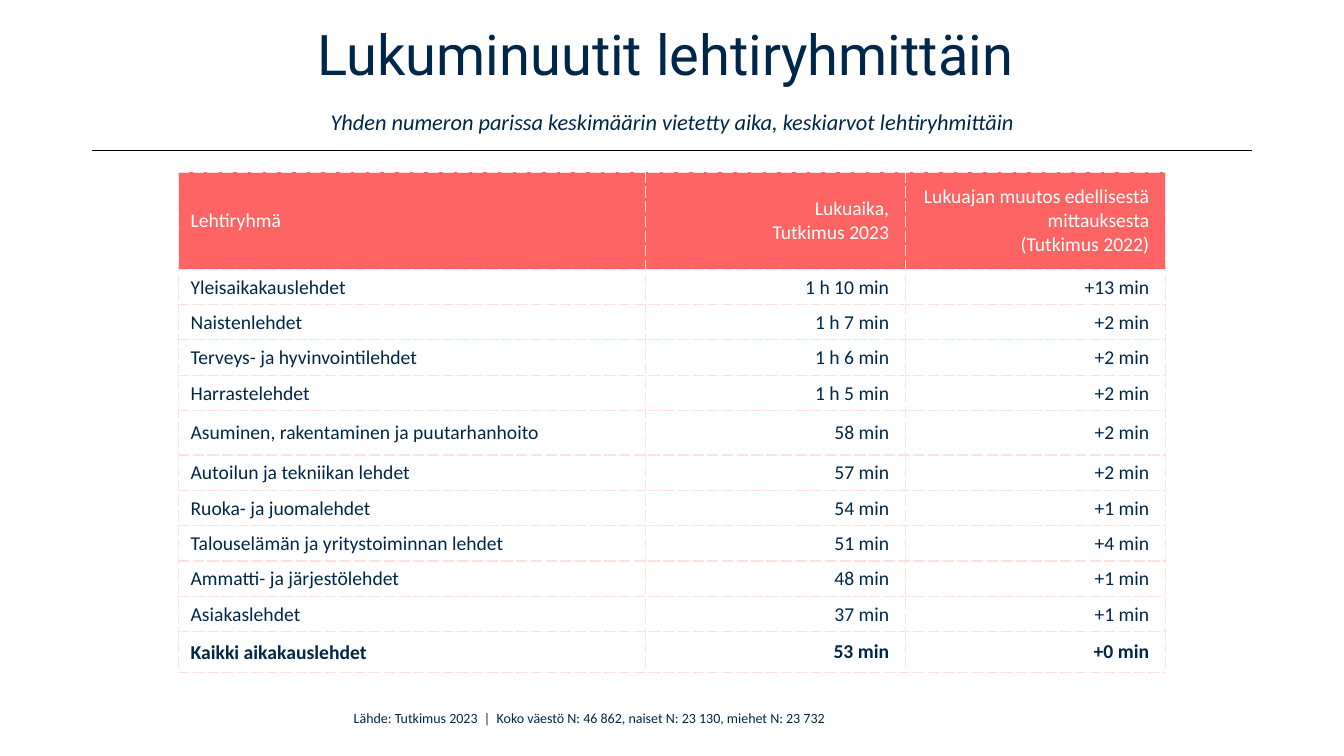
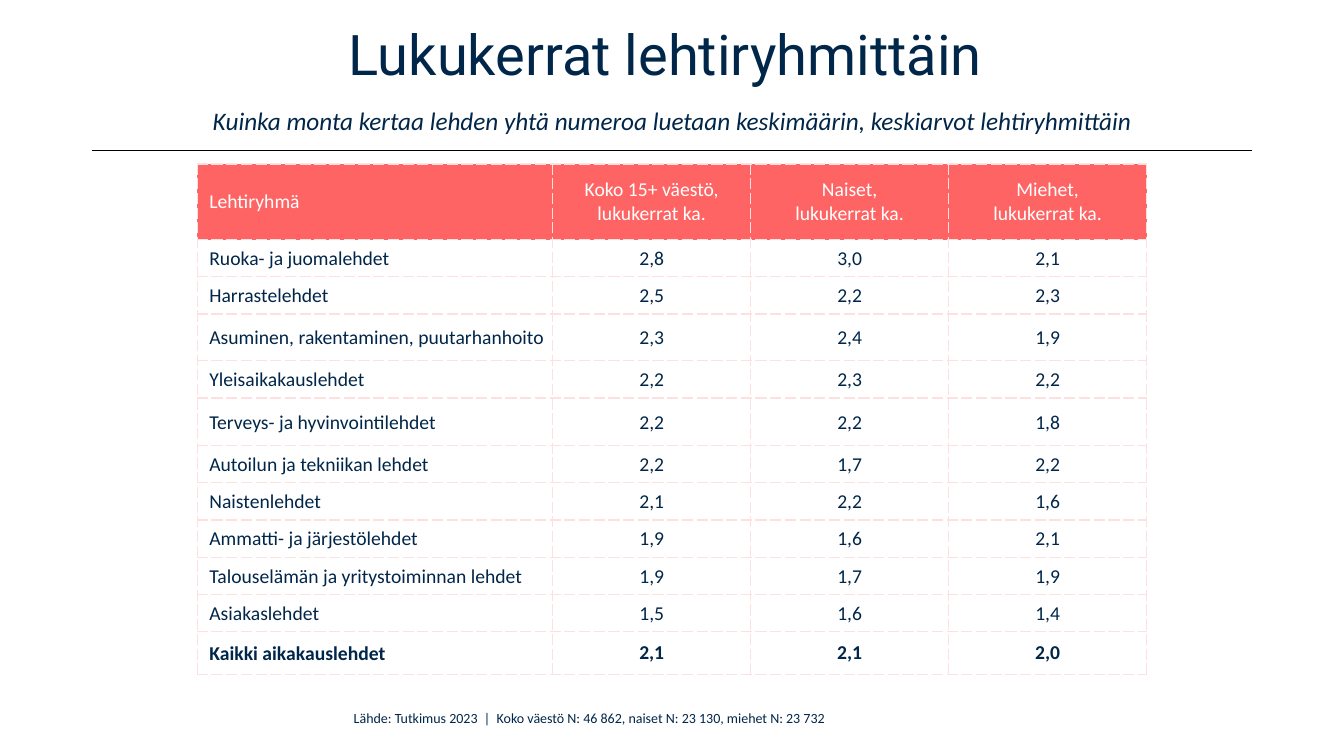
from dataclasses import dataclass

from lxml import etree
from pptx import Presentation
from pptx.dml.color import RGBColor
from pptx.enum.shapes import MSO_CONNECTOR
from pptx.enum.text import MSO_ANCHOR, PP_ALIGN
from pptx.oxml.ns import qn
from pptx.util import Inches, Pt

LEFT, CENTER, RIGHT = PP_ALIGN.LEFT, PP_ALIGN.CENTER, PP_ALIGN.RIGHT
MIDDLE, TOP = MSO_ANCHOR.MIDDLE, MSO_ANCHOR.TOP
STRAIGHT = MSO_CONNECTOR.STRAIGHT


@dataclass(frozen=True)
class Theme:
    navy: str = "002649"
    black: str = "000000"
    white: str = "FFFFFF"
    coral: str = "FF6464"
    blush: str = "FFE0E0"
    title_font: str = "Roboto"
    body_font: str = "Calibri"
    title_size: int = 40
    table_size: int = 14
    footer_size: int = 10
    title_spacing: int = 35
    line_width: int = 1


THEME = Theme()
WIDTH, HEIGHT = Inches(13.33), Inches(7.5)

FOOTER = "Lähde: Tutkimus 2023  |  Koko väestö N: 46 862, naiset N: 23 130, miehet N: 23 732"
TITLE_AREA = (6.9, 4.27, 86.25, 14.27)
FOOTER_AREA = (18.83, 93.2, 50, 3.6)
RULE_ROW = 19.87
RULES = [(9.6, 91.12, THEME.navy), (6.83, 93.17, THEME.black)]

SLIDES = [
    {
        "title": "Lukuminuutit lehtiryhmittäin ",
        "subtitle": "Yhden numeron parissa keskimäärin vietetty aika, keskiarvot lehtiryhmittäin",
        "subtitle_size": 16,
        "top": 22.8,
        "columns": [34.73, 19.35, 19.35],
        "row_height": 4.68,
        "special_rows": {0: 12.8, 5: 5.87, 11: 5.4},
        "value_align": RIGHT,
        "value_inset": 0.16,
        "rows": [
            ("Lehtiryhmä", "Lukuaika,\nTutkimus 2023",
             "Lukuajan muutos edellisestä mittauksesta\n(Tutkimus 2022)"),
            ("Yleisaikakauslehdet", "1 h 10 min", "+13 min"),
            ("Naistenlehdet", "1 h 7 min", "+2 min"),
            ("Terveys- ja hyvinvointilehdet", "1 h 6 min", "+2 min"),
            ("Harrastelehdet", "1 h 5 min", "+2 min"),
            ("Asuminen, rakentaminen ja puutarhanhoito", "58 min", "+2 min"),
            ("Autoilun ja tekniikan lehdet", "57 min", "+2 min"),
            ("Ruoka- ja juomalehdet", "54 min", "+1 min"),
            ("Talouselämän ja yritystoiminnan lehdet", "51 min", "+4 min"),
            ("Ammatti- ja järjestölehdet", "48 min", "+1 min"),
            ("Asiakaslehdet", "37 min", "+1 min"),
            ("Kaikki aikakauslehdet", "53 min", "+0 min"),
        ],
    },
    {
        "title": "Lukukerrat lehtiryhmittäin ",
        "subtitle": "Kuinka monta kertaa lehden yhtä numeroa luetaan keskimäärin, "
                    "keskiarvot lehtiryhmittäin",
        "subtitle_size": 18,
        "top": 21.7,
        "columns": [26.45, 14.73, 14.73, 14.73],
        "row_height": 4.92,
        "special_rows": {0: 10, 3: 6.2, 5: 6.3, 11: 5.7},
        "value_align": CENTER,
        "value_inset": 0.01,
        "rows": [
            ("Lehtiryhmä", "Koko 15+ väestö,\nlukukerrat ka.",
             "Naiset,\nlukukerrat ka.", "Miehet,\nlukukerrat ka."),
            ("Ruoka- ja juomalehdet", "2,8", "3,0", "2,1"),
            ("Harrastelehdet", "2,5", "2,2", "2,3"),
            ("Asuminen, rakentaminen, puutarhanhoito", "2,3", "2,4", "1,9"),
            ("Yleisaikakauslehdet", "2,2", "2,3", "2,2"),
            ("Terveys- ja hyvinvointilehdet", "2,2", "2,2", "1,8"),
            ("Autoilun ja tekniikan lehdet", "2,2", "1,7", "2,2"),
            ("Naistenlehdet", "2,1", "2,2", "1,6"),
            ("Ammatti- ja järjestölehdet", "1,9", "1,6", "2,1"),
            ("Talouselämän ja yritystoiminnan lehdet", "1,9", "1,7", "1,9"),
            ("Asiakaslehdet", "1,5", "1,6", "1,4"),
            ("Kaikki aikakauslehdet", "2,1", "2,1", "2,0"),
        ],
    },
]


def across(percent):
    return round(WIDTH * percent / 100)


def down(percent):
    return round(HEIGHT * percent / 100)


def add_run(paragraph, text, size, font=THEME.body_font, color=THEME.navy,
            bold=False, italic=False):
    run = paragraph.add_run()
    run.text = text
    run.font.name = font
    run.font.size = Pt(size)
    run.font.bold = bold
    run.font.italic = italic
    run.font.color.rgb = RGBColor.from_string(color)


def add_text_area(slide, area, anchor):
    left, top, width, height = area
    shape = slide.shapes.add_textbox(across(left), down(top), across(width), down(height))
    shape.text_frame.word_wrap = True
    shape.text_frame.vertical_anchor = anchor
    paragraph = shape.text_frame.paragraphs[0]
    paragraph.alignment = CENTER
    return paragraph


def add_frame(slide, content):
    for start, end, color in RULES:
        rule = slide.shapes.add_connector(
            STRAIGHT, across(start), down(RULE_ROW), across(end), down(RULE_ROW))
        rule.line.color.rgb = RGBColor.from_string(color)
        rule.line.width = Pt(THEME.line_width)
        etree.SubElement(rule.element.spPr, qn("a:effectLst"))
    add_run(add_text_area(slide, FOOTER_AREA, TOP), FOOTER, THEME.footer_size)
    heading = add_text_area(slide, TITLE_AREA, MIDDLE)
    heading.line_spacing = Pt(THEME.title_spacing)
    add_run(heading, content["title"], THEME.title_size, font=THEME.title_font)
    heading.add_line_break()
    add_run(heading, content["subtitle"], content["subtitle_size"], italic=True)


def set_borders(cell):
    properties = cell._tc.get_or_add_tcPr()
    for side in ("a:lnL", "a:lnR", "a:lnT", "a:lnB"):
        line = etree.SubElement(properties, qn(side), w=str(Pt(THEME.line_width)))
        fill = etree.SubElement(line, qn("a:solidFill"))
        etree.SubElement(fill, qn("a:srgbClr"), val=THEME.blush)
        etree.SubElement(line, qn("a:prstDash"), val="sysDash")


def fill_cell(cell, text, align, insets, color, bold, background):
    set_borders(cell)
    if background:
        cell.fill.solid()
        cell.fill.fore_color.rgb = RGBColor.from_string(background)
    else:
        cell.fill.background()
    cell.vertical_anchor = MIDDLE
    cell.margin_left, cell.margin_top, cell.margin_right, cell.margin_bottom = map(Inches, insets)
    for index, line in enumerate(text.split("\n")):
        frame = cell.text_frame
        paragraph = frame.add_paragraph() if index else frame.paragraphs[0]
        paragraph.alignment = align
        add_run(paragraph, line, THEME.table_size, color=color, bold=bold)


def cell_insets(content, is_label, is_header, is_total):
    if is_header or (is_total and not is_label):
        right = 0.12 if is_label else max(0.12, content["value_inset"])
        return 0.12, 0.05, right, 0.05
    if is_label:
        return 0.12, 0.01, 0.01, 0
    return 0.01, 0.01, content["value_inset"], 0


def add_reading_table(slide, content):
    rows, columns = content["rows"], content["columns"]
    heights = [content["special_rows"].get(index, content["row_height"])
               for index in range(len(rows))]
    left = (100 - sum(columns)) / 2
    table = slide.shapes.add_table(
        len(rows), len(columns), across(left), down(content["top"]),
        across(sum(columns)), down(sum(heights))).table
    table.horz_banding = False
    for column, width in zip(table.columns, columns):
        column.width = across(width)
    for row_index, values in enumerate(rows):
        table.rows[row_index].height = down(heights[row_index])
        is_header, is_total = row_index == 0, row_index == len(rows) - 1
        for column_index, text in enumerate(values):
            is_label = column_index == 0
            fill_cell(
                table.cell(row_index, column_index), text,
                align=LEFT if is_label else content["value_align"],
                insets=cell_insets(content, is_label, is_header, is_total),
                color=THEME.white if is_header else THEME.navy,
                bold=is_total,
                background=THEME.coral if is_header else None)


def main():
    presentation = Presentation()
    presentation.slide_width, presentation.slide_height = WIDTH, HEIGHT
    for content in SLIDES:
        slide = presentation.slides.add_slide(presentation.slide_layouts[6])
        add_frame(slide, content)
        add_reading_table(slide, content)
    presentation.save("out.pptx")


if __name__ == "__main__":
    main()
